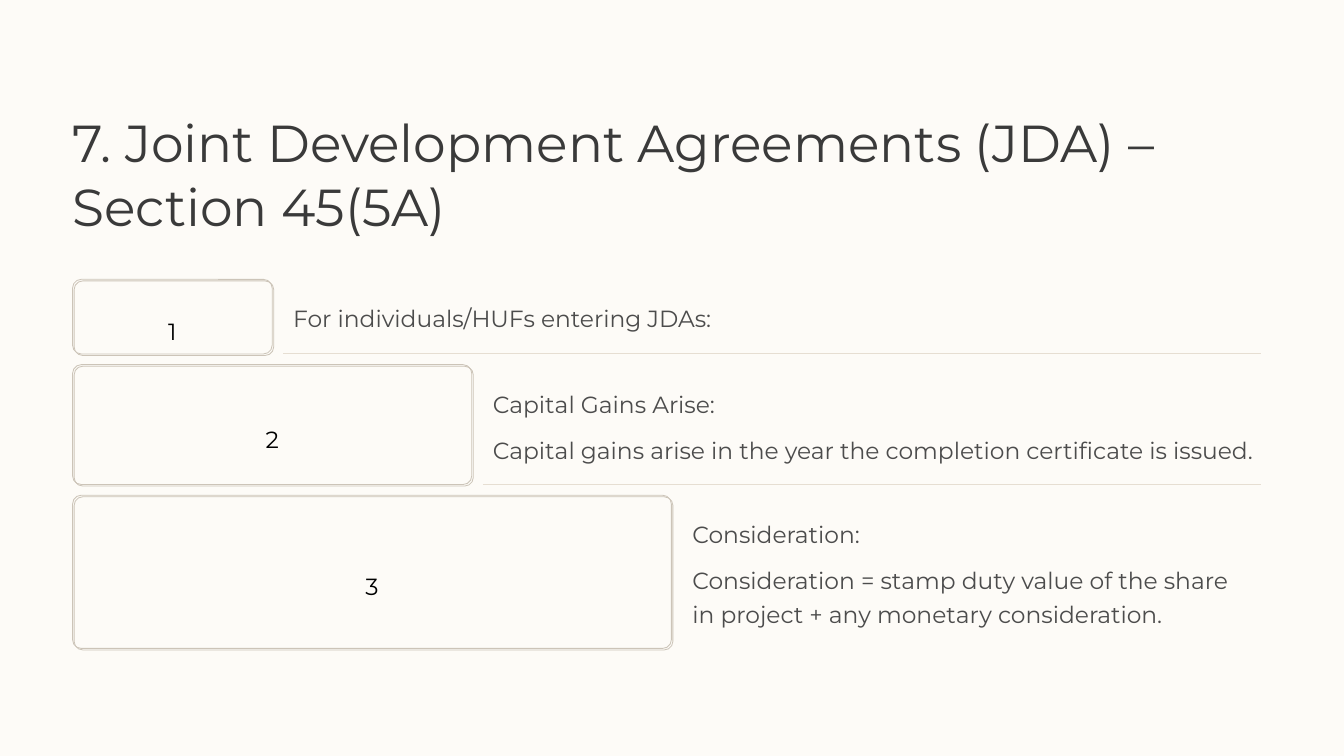
from dataclasses import dataclass

from lxml.etree import SubElement
from pptx import Presentation
from pptx.dml.color import RGBColor
from pptx.enum.shapes import MSO_CONNECTOR, MSO_SHAPE
from pptx.enum.text import PP_ALIGN
from pptx.oxml.ns import qn
from pptx.util import Cm, Pt


@dataclass(frozen=True)
class Theme:
    font: str = "Montserrat"
    background: str = "FDFBF7"
    title: str = "3A3A3A"
    body: str = "4C4C4C"
    number: str = "000000"
    outline: str = "CCC4B8"
    divider: str = "E6DED2"
    title_size: float = 37.1
    body_size: float = 16.7
    line_width: float = 0.6


THEME = Theme()
LEFT, RIGHT = 1.83, 31.78
STEPS_TOP, STEP_WIDTH, STEP_GAP = 7.04, 5.03, 0.27

# Box height in cm, heading, detail
STEPS = [
    (1.88, "For individuals/HUFs entering JDAs:", ""),
    (3.02, "Capital Gains Arise:",
     "Capital gains arise in the year the completion certificate is issued."),
    (3.86, "Consideration:",
     "Consideration = stamp duty value of the share in project "
     "+ any monetary consideration."),
]


def rgb(value):
    return RGBColor.from_string(value)


def add_text(s, text, x, y, w, h, spacing, size=THEME.body_size,
             color=THEME.body, align=PP_ALIGN.LEFT):
    tf = s.shapes.add_textbox(Cm(x), Cm(y), Cm(w), Cm(h)).text_frame
    tf.margin_left = tf.margin_right = tf.margin_top = tf.margin_bottom = 0
    tf.word_wrap = True
    p = tf.paragraphs[0]
    p.text = text
    p.alignment = align
    p.line_spacing = Pt(spacing)
    p.font.name = THEME.font
    p.font.size = Pt(size)
    p.font.color.rgb = rgb(color)


def add_hard_shadow(sp):
    """Cast the outline colour down and right, without blur."""
    effects = SubElement(sp._element.spPr, qn("a:effectLst"))
    shadow = SubElement(effects, qn("a:outerShdw"), blurRad="0",
                        dist=str(Pt(1.6)), dir="2700000", algn="ctr",
                        rotWithShape="0")
    SubElement(shadow, qn("a:srgbClr"), val=THEME.outline)


def add_step_box(s, number, x, y, w, h):
    sp = s.shapes.add_shape(MSO_SHAPE.ROUNDED_RECTANGLE,
                            Cm(x), Cm(y), Cm(w), Cm(h))
    sp.adjustments[0] = 0.22 / h
    sp.fill.background()
    sp.line.color.rgb = rgb(THEME.outline)
    sp.line.width = Pt(THEME.line_width)
    add_hard_shadow(sp)
    label_w, label_h = 0.74, 0.91
    add_text(s, str(number), x + (w - label_w) / 2, y + (h - label_h) / 2,
             label_w, label_h, 33.3, color=THEME.number,
             align=PP_ALIGN.CENTER)


def add_divider(s, x, y, w):
    line = s.shapes.add_connector(MSO_CONNECTOR.STRAIGHT,
                                  Cm(x), Cm(y), Cm(x + w), Cm(y))
    line.line.color.rgb = rgb(THEME.divider)
    line.line.width = Pt(THEME.line_width)
    SubElement(line._element.spPr, qn("a:effectLst"))


def add_step_text(s, heading, detail, x, y, w, detail_h):
    add_text(s, heading, x, y + 0.53, w, 0.81, 22.9)
    if detail:
        add_text(s, detail, x, y + 1.66, w, detail_h, 23.8)


def add_steps(s, x, y, right):
    for number, (h, heading, detail) in enumerate(STEPS, 1):
        w = number * STEP_WIDTH
        last = number == len(STEPS)
        add_step_box(s, number, x, y, w, h)
        divider_x, text_x = x + w + 0.28, x + w + 0.53
        text_right = right - 0.28 if last else right
        add_step_text(s, heading, detail, text_x, y, text_right - text_x,
                      1.68 if last else 0.84)
        if not last:
            add_divider(s, divider_x, y + h - 0.01, right - divider_x)
        y += h + STEP_GAP


def main():
    prs = Presentation()
    prs.slide_width, prs.slide_height = Cm(33.87), Cm(19.05)
    s = prs.slides.add_slide(prs.slide_layouts[6])
    s.background.fill.solid()
    s.background.fill.fore_color.rgb = rgb(THEME.background)
    add_text(s, "7. Joint Development Agreements (JDA) – Section 45(5A)",
             LEFT, 2.72, 30.2, 3.28, 46.2, THEME.title_size, THEME.title)
    add_steps(s, LEFT, STEPS_TOP, RIGHT)
    prs.save("out.pptx")


if __name__ == "__main__":
    main()
